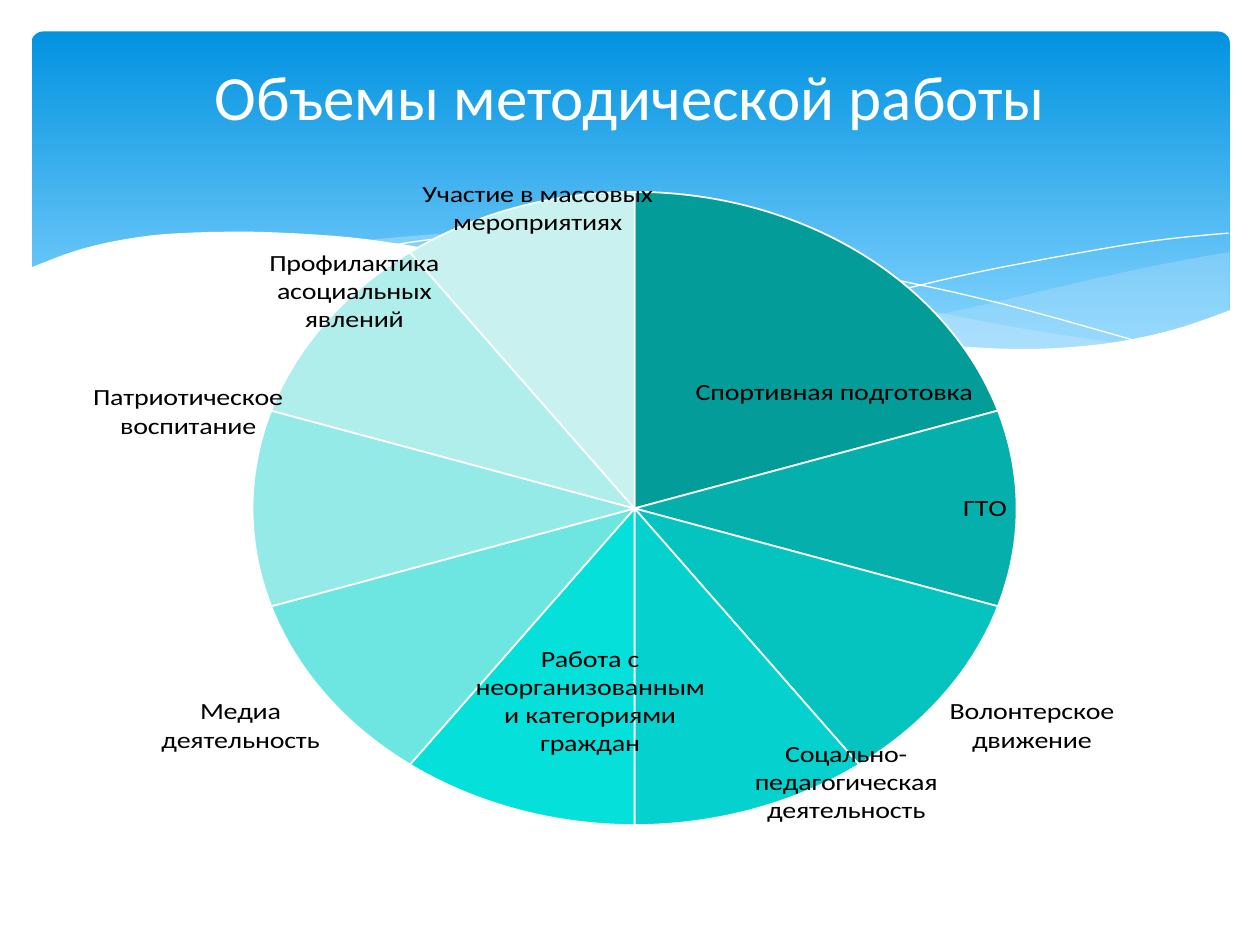
"""Build the slide on volumes of methodical work: a wave banner and a pie chart."""
from lxml import etree
from pptx import Presentation
from pptx.chart.data import CategoryChartData
from pptx.dml.color import RGBColor
from pptx.enum.chart import XL_CHART_TYPE, XL_LABEL_POSITION
from pptx.enum.shapes import MSO_SHAPE
from pptx.enum.text import MSO_ANCHOR, PP_ALIGN
from pptx.oxml import parse_xml
from pptx.oxml.ns import nsdecls, qn
from pptx.util import Inches, Pt

PIE = XL_CHART_TYPE.PIE
FIT = XL_LABEL_POSITION.BEST_FIT
ROUND = MSO_SHAPE.ROUNDED_RECTANGLE
MIDDLE = MSO_ANCHOR.MIDDLE
CENTER = PP_ALIGN.CENTER
FONT = "Calibri"
WIDE, HIGH = 10, 7.5
UNITS = 1000
HEX = {"white": "FFFFFF", "black": "000000", "top": "0293E0",
       "low": "83D3FE", "wave": "C6E7FC"}

TITLE = "Объемы методической работы"
SLICES = [
    ("Спортивная подготовка", 20, "039C99", None),
    ("ГТО", 10, "05AFAB", None),
    ("Волонтерское движение", 10, "05C3BF", None),
    ("Соцально-педагогическая деятельность", 10, "05D2CF", None),
    ("Работа с неорганизованными категориями граждан", 10, "05E0DB", (1.51, -1.63)),
    ("Медиа деятельность", 10, "6DE6E1", None),
    ("Патриотическое воспитание", 10, "93EAE6", (0.3, -0.92)),
    ("Профилактика асоциальных явлений", 10, "AFEEEA", (0.95, 0.15)),
    ("Участие в массовых мероприятиях", 10, "C8F1EF", (1.1, 0.34)),
]
FRAME = (0.31, 1.15, 9.25, 6.22)
INSET = (0.022, 0.025)

WAVES = [
    ([[(9.76, 2), (9.21, 2.1), (8.61, 2.23), (7.53, 2.48), (6.61, 2.65)],
      [(6.61, 2.65), (7.32, 2.74), (8.03, 2.78), (8.72, 2.74), (9.28, 2.63), (9.76, 2.47)]], 29),
    ([[(8.93, 2.73), (8.07, 2.6), (7.06, 2.4), (6.29, 2.22), (5.55, 2.05), (4.89, 1.94),
       (4.2, 1.87), (3.61, 1.85), (2.86, 1.91)],
      [(2.86, 1.91), (3.62, 2.03), (4.49, 2.22), (5.66, 2.48), (6.5, 2.64),
       (7.36, 2.75), (8.18, 2.78), (8.93, 2.73)]], 40),
]
LINES = [
    [(3.09, 1.95), (3.53, 1.89), (4.16, 1.87), (4.89, 1.9), (5.82, 2),
     (6.95, 2.19), (7.95, 2.41), (9.07, 2.72)],
    [(6.13, 2.57), (6.95, 2.35), (7.76, 2.16), (8.66, 1.99), (9.24, 1.9), (9.75, 1.85)],
]
HILL = [
    [(9.77, 2.46), (9.3, 2.62), (8.75, 2.73), (8.09, 2.77), (7.26, 2.72), (6.48, 2.62),
     (5.55, 2.45), (4.47, 2.2), (3.65, 2.02), (2.92, 1.9), (2.3, 1.85), (1.77, 1.84),
     (1.19, 1.87), (0.67, 1.97), (0.23, 2.13)],
    [(0.23, 3.29), (9.77, 3.29)],
]


def rgb(code):
    return RGBColor.from_string(code)


def curve(keys, steps=5):
    """Sample a smooth spline through the key points."""
    ends = [keys[0], *keys, keys[-1]]
    dots = [keys[0]]
    for a, b, c, d in zip(ends, ends[1:], ends[2:], ends[3:]):
        for n in range(1, steps + 1):
            t = n / steps
            dots.append(tuple(
                b[i] + t * (c[i] - a[i]) / 2
                + t * t * (2 * a[i] - 5 * b[i] + 4 * c[i] - d[i]) / 2
                + t ** 3 * (3 * b[i] - a[i] - 3 * c[i] + d[i]) / 2 for i in (0, 1)))
    return dots


def draw(slide, parts, close):
    """Draw the joined curves as one outline."""
    dots = [(round(x * UNITS), round(y * UNITS))
            for part in parts for x, y in curve(part)]
    pen = slide.shapes.build_freeform(*dots[0], scale=Inches(1) / UNITS)
    pen.add_line_segments(dots[1:], close=close)
    shape = pen.convert_to_shape()
    shape.shadow.inherit = False
    return shape


def area(slide, parts, code, share=100):
    """Draw a filled area with the given opacity in per cent."""
    shape = draw(slide, parts, True)
    shape.fill.solid()
    shape.fill.fore_color.rgb = rgb(code)
    shape.line.fill.background()
    if share < 100:
        tint = shape.fill._xPr.find(".//" + qn("a:srgbClr"))
        etree.SubElement(tint, qn("a:alpha")).set("val", str(share * 1000))


def banner(slide):
    """Draw the gradient panel and its waves."""
    panel = slide.shapes.add_shape(ROUND, *map(Inches, (0.25, 0.25, 9.51, 2.7)))
    panel.adjustments[0] = 0.034
    panel.shadow.inherit = False
    panel.line.fill.background()
    panel.fill.gradient()
    panel.fill.gradient_angle = 270
    for stop, place, name in zip(panel.fill.gradient_stops, (0, 0.9), ("top", "low")):
        stop.position = place
        stop.color.rgb = rgb(HEX[name])
    for parts, share in WAVES:
        area(slide, parts, HEX["wave"], share)
    for keys in LINES:
        line = draw(slide, [keys], False)
        line.fill.background()
        line.line.color.rgb = rgb(HEX["white"])
        line.line.width = Pt(0)
    area(slide, HILL, HEX["white"])


def layout(x, y, lead="", tail=""):
    return (f'<c:layout {nsdecls("c")}><c:manualLayout>{lead}<c:x val="{x:.4f}"/>'
            f'<c:y val="{y:.4f}"/>{tail}</c:manualLayout></c:layout>')


def pie(slide):
    """Add the pie and shift the labels that have an offset."""
    wide, high = FRAME[2:]
    data = CategoryChartData()
    data.categories = [item[0] for item in SLICES]
    data.add_series("Series 1", [item[1] for item in SLICES])
    chart = slide.shapes.add_chart(PIE, *map(Inches, FRAME), data).chart
    chart.has_legend = chart.has_title = False
    plot = chart.plots[0]
    plot.vary_by_categories = True
    series = plot.series[0]

    ground = chart._chartSpace.find(".//" + qn("c:plotArea"))
    for old in ground.findall(qn("c:layout")):
        ground.remove(old)
    x, y = INSET
    ground.insert(0, parse_xml(layout(
        x, y, '<c:layoutTarget val="inner"/><c:xMode val="edge"/><c:yMode val="edge"/>',
        f'<c:w val="{1 - x:.3f}"/><c:h val="{1 - y:.3f}"/>')))

    tags = series.data_labels
    tags.show_category_name, tags.show_value = True, False
    tags.show_percentage = False
    tags.position = FIT
    for font in (chart.font, tags.font):
        font.name, font.size = FONT, Pt(16)
        font.color.rgb = rgb(HEX["black"])
    root = tags._element
    for old in root.findall(qn("c:showLeaderLines")):
        root.remove(old)
    root.append(parse_xml(f'<c:showLeaderLines {nsdecls("c")} val="0"/>'))
    flags = "".join(f'<c:show{name} val="{int(name == "CatName")}"/>' for name in (
        "LegendKey", "Val", "CatName", "SerName", "Percent", "BubbleSize"))
    spot = 0
    for n, (_, _, code, move) in enumerate(SLICES):
        part = series.points[n].format
        part.fill.solid()
        part.fill.fore_color.rgb = rgb(code)
        part.line.color.rgb = rgb(HEX["white"])
        part.line.width = Pt(1)
        if move:
            root.insert(spot, parse_xml(
                f'<c:dLbl {nsdecls("c")}><c:idx val="{n}"/>'
                f'{layout(move[0] / wide, move[1] / high)}'
                f'<c:dLblPos val="bestFit"/>{flags}</c:dLbl>'))
            spot += 1


def title(slide):
    """Add the heading."""
    frame = slide.shapes.add_textbox(
        Inches(0.5), Inches(0.37), Inches(WIDE - 1), Inches(0.78)).text_frame
    frame.word_wrap = True
    frame.vertical_anchor = MIDDLE
    line = frame.paragraphs[0]
    line.alignment = CENTER
    run = line.add_run()
    run.text = TITLE
    run.font.name, run.font.size = FONT, Pt(36)
    run.font.color.rgb = rgb(HEX["white"])


def main():
    deck = Presentation()
    deck.slide_width, deck.slide_height = Inches(WIDE), Inches(HIGH)
    slide = deck.slides.add_slide(deck.slide_layouts[6])
    banner(slide)
    pie(slide)
    title(slide)
    deck.save("out.pptx")


if __name__ == "__main__":
    main()
